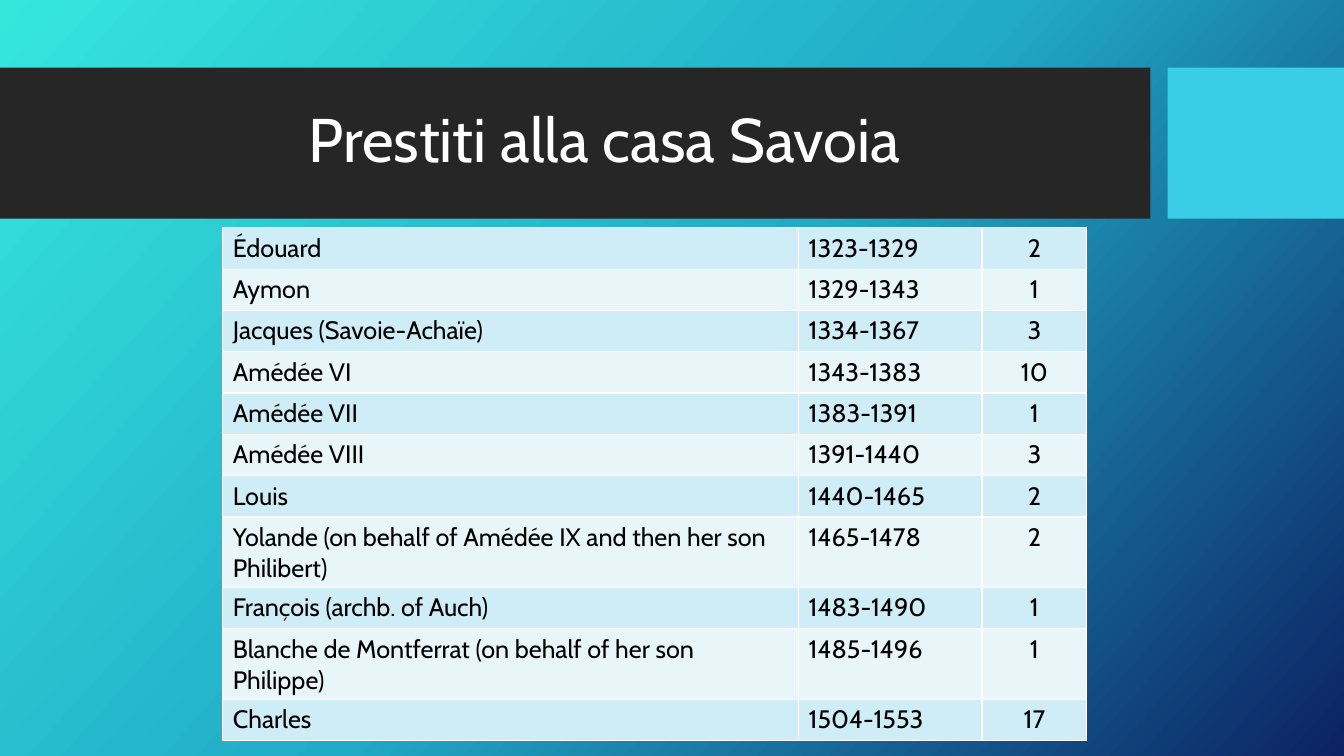
from copy import deepcopy

from lxml import etree
from pptx import Presentation
from pptx import util as u
from pptx.dml.color import RGBColor
from pptx.enum import shapes, text
from pptx.oxml.ns import qn

FONT = "Cabin"
COLORS = {
    "sky_light": "36E6DD",
    "sky_mid": "21ABC8",
    "sky_dark": "0C2263",
    "banner": "262626",
    "accent": "39CDE7",
    "title": "FFFFFF",
    "ink": "000000",
    "border": "FFFFFF",
    "band_odd": "CEEDF6",
    "band_even": "E8F6FA",
}
LOANS = [
    ("Édouard", "1323-1329", 2),
    ("Aymon", "1329-1343", 1),
    ("Jacques (Savoie-Achaïe)", "1334-1367", 3),
    ("Amédée VI", "1343-1383", 10),
    ("Amédée VII", "1383-1391", 1),
    ("Amédée VIII", "1391-1440", 3),
    ("Louis", "1440-1465", 2),
    ("Yolande (on behalf of Amédée IX and then her son Philibert)", "1465-1478", 2),
    ("François (archb. of Auch)", "1483-1490", 1),
    ("Blanche de Montferrat (on behalf of her son Philippe)", "1485-1496", 1),
    ("Charles", "1504-1553", 17),
]


def color(name):
    """Return the named colour."""
    return RGBColor.from_string(COLORS[name])


def style_paragraph(paragraph, size, ink, align):
    """Align a paragraph and format its runs."""
    paragraph.alignment = align
    for run in paragraph.runs:
        run.font.name = FONT
        run.font.size = u.Pt(size)
        run.font.color.rgb = color(ink)


def paint_background(slide):
    """Fill the slide with a diagonal three-colour gradient."""
    fill = slide.background.fill
    fill.gradient()
    fill.gradient_angle = 360 - 42
    stop_list = slide.element.find(".//" + qn("a:gsLst"))
    stop_list.insert(1, deepcopy(stop_list[0]))
    names = ("sky_light", "sky_mid", "sky_dark")
    for stop, name, position in zip(fill.gradient_stops, names, (0, 0.5, 1)):
        stop.color.rgb = color(name)
        stop.position = position


def add_block(slide, left, top, width, height, name):
    """Draw a plain filled rectangle."""
    block = slide.shapes.add_shape(
        shapes.MSO_SHAPE.RECTANGLE,
        u.Inches(left), u.Inches(top), u.Inches(width), u.Inches(height))
    block.shadow.inherit = False
    block.fill.solid()
    block.fill.fore_color.rgb = color(name)
    block.line.fill.background()


def add_banner(slide, left, top, width, height, heading):
    """Place the title band, its accent block and the heading."""
    accent_width, gap = 1.75, 0.17
    band_width = width - accent_width - gap
    add_block(slide, left, top, band_width, height, "banner")
    add_block(slide, left + width - accent_width, top, accent_width, height, "accent")
    title = slide.shapes.add_textbox(
        u.Inches(left + 0.74), u.Inches(top + 0.15),
        u.Inches(band_width - 0.9), u.Inches(height - 0.32))
    frame = title.text_frame
    frame.word_wrap = True
    frame.vertical_anchor = text.MSO_ANCHOR.MIDDLE
    frame.text = heading
    frame.paragraphs[0].line_spacing = 0.9
    style_paragraph(frame.paragraphs[0], 44, "title", text.PP_ALIGN.CENTER)


def add_borders(cell):
    """Draw a thin line on each side of a cell."""
    properties = cell._tc.get_or_add_tcPr()
    for index, side in enumerate(("a:lnL", "a:lnR", "a:lnT", "a:lnB")):
        line = etree.Element(qn(side), w=str(u.Pt(1)))
        solid = etree.SubElement(line, qn("a:solidFill"))
        etree.SubElement(solid, qn("a:srgbClr"), val=COLORS["border"])
        properties.insert(index, line)


def add_loans_table(slide, left, top, column_widths, row_height, loans):
    """Place the banded table of borrowers, years and loan counts."""
    table = slide.shapes.add_table(
        len(loans), len(column_widths), u.Inches(left), u.Inches(top),
        u.Inches(sum(column_widths)), u.Inches(row_height * len(loans))).table
    table.first_row = False
    for column, width in zip(table.columns, column_widths):
        column.width = u.Inches(width)
    aligns = (text.PP_ALIGN.LEFT, text.PP_ALIGN.LEFT, text.PP_ALIGN.CENTER)
    for index, (row, loan) in enumerate(zip(table.rows, loans)):
        row.height = u.Inches(row_height)
        band = "band_even" if index % 2 else "band_odd"
        for cell, value, align in zip(row.cells, loan, aligns):
            cell.text_frame.text = str(value)
            style_paragraph(cell.text_frame.paragraphs[0], 18, "ink", align)
            cell.fill.solid()
            cell.fill.fore_color.rgb = color(band)
            add_borders(cell)


def main():
    """Build the slide and save it."""
    deck = Presentation()
    deck.slide_width, deck.slide_height = u.Inches(13.33), u.Inches(7.5)
    slide = deck.slides.add_slide(deck.slide_layouts[6])
    paint_background(slide)
    add_banner(slide, 0, 0.67, 13.33, 1.5, "Prestiti alla casa Savoia")
    add_loans_table(slide, 2.21, 2.26, (5.71, 1.82, 1.04), 0.41, LOANS)
    deck.save("out.pptx")


if __name__ == "__main__":
    main()
